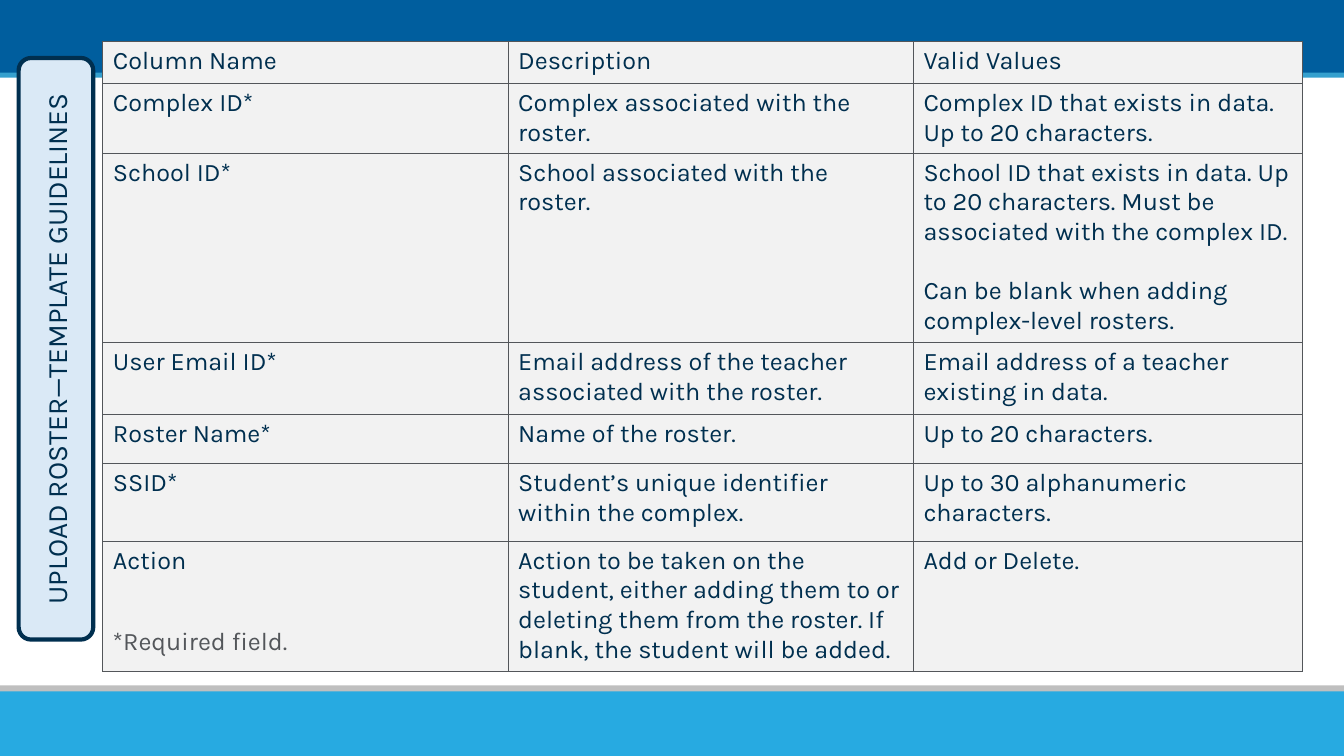
import pptx
import pptx.util
import pptx.dml.color
import pptx.enum.shapes
import pptx.enum.text
import pptx.oxml

Inches, Pt = pptx.util.Inches, pptx.util.Pt
RGB = pptx.dml.color.RGBColor.from_string
SHAPE = pptx.enum.shapes.MSO_SHAPE
ALIGN, ANCHOR = pptx.enum.text.PP_ALIGN, pptx.enum.text.MSO_ANCHOR

THEME = {
    "font": "Karla", "body": 18, "title": 20, "line_gap": 21,
    "ink": "002F4F", "grey": "53565A", "cell": "F2F2F2", "pill": "DAE9F6",
    "top": "005E9E", "top_edge": "35A0CE",
    "bottom_edge": "BFBFBF", "bottom": "27AAE1",
}
W, H = 13.33, 7.5

prs = pptx.Presentation()
prs.slide_width, prs.slide_height = Inches(W), Inches(H)
s = prs.slides.add_slide(prs.slide_layouts[6])


def add_box(kind, left, top, width, height, fill):
    sp = s.shapes.add_shape(kind, *map(Inches, (left, top, width, height)))
    sp.shadow.inherit = False
    sp.fill.solid()
    sp.fill.fore_color.rgb = RGB(THEME[fill])
    sp.line.fill.background()
    return sp


def write(p, text, size="body", color="ink"):
    r = p.add_run()
    r.text = text
    for name, value in {"name": THEME["font"], "size": Pt(THEME[size])}.items():
        setattr(r.font, name, value)
    r.font.color.rgb = RGB(THEME[color])


# Header and footer bands
for top, height, fill in [(0, 0.74, "top"), (0.72, 0.05, "top_edge"),
                          (6.8, 0.14, "bottom_edge"), (6.86, 0.64, "bottom")]:
    add_box(SHAPE.RECTANGLE, 0, top, W, height, fill)

# Table of template columns; a tuple holds the paragraphs of one cell
rows = [
    (0.42, "Column Name", "Description", "Valid Values"),
    (0.69, "Complex ID*", "Complex associated with the roster.",
     "Complex ID that exists in data. Up to 20 characters."),
    (1.88, "School ID*", "School associated with the roster.",
     ("School ID that exists in data. Up to 20 characters. "
      "Must be associated with the complex ID.",
      "Can be blank when adding complex-level rosters.")),
    (0.71, "User Email ID*",
     "Email address of the teacher associated with the roster.",
     "Email address of a teacher existing in data."),
    (0.49, "Roster Name*", "Name of the roster.", "Up to 20 characters."),
    (0.77, "SSID*", "Student’s unique identifier within the complex.",
     "Up to 30 alphanumeric characters."),
    (1.29, "Action",
     "Action to be taken on the student, either adding them to or deleting "
     "them from the roster. If blank, the student will be added.",
     "Add or Delete."),
]
col_widths = [4.02, 4.02, 3.86]
left, top = 1.02, 0.41
tbl = s.shapes.add_table(
    len(rows), len(col_widths), Inches(left), Inches(top),
    Inches(sum(col_widths)), Inches(sum(row[0] for row in rows))).table
tbl.first_row = tbl.horz_banding = False
for col, width in zip(tbl.columns, col_widths):
    col.width = Inches(width)

BORDER = ('<a:{} xmlns:a="http://schemas.openxmlformats.org/drawingml/2006/main"'
          ' w="12700"><a:solidFill><a:srgbClr val="{}"/></a:solidFill></a:{}>')
for i, (height, *texts) in enumerate(rows):
    tbl.rows[i].height = Inches(height)
    for j, text in enumerate(texts):
        cell = tbl.cell(i, j)
        tcPr = cell._tc.get_or_add_tcPr()
        for side in ("lnL", "lnR", "lnT", "lnB"):
            tcPr.append(pptx.oxml.parse_xml(BORDER.format(side, THEME["grey"], side)))
        cell.fill.solid()
        cell.fill.fore_color.rgb = RGB(THEME["cell"])
        tf = cell.text_frame
        for k, part in enumerate(text if isinstance(text, tuple) else (text,)):
            p = tf.paragraphs[0] if k == 0 else tf.add_paragraph()
            if k:
                p.space_before = Pt(THEME["line_gap"])
            write(p, part)

# Rotated title pill
pill_w, pill_h, mid_x, mid_y = 5.77, 0.74, 0.555, 3.46
sp = add_box(SHAPE.ROUNDED_RECTANGLE, mid_x - pill_w / 2, mid_y - pill_h / 2,
             pill_w, pill_h, "pill")
sp.rotation = 270
sp.line.color.rgb = RGB(THEME["ink"])
sp.line.width = Pt(3)
tf = sp.text_frame
tf.word_wrap, tf.vertical_anchor = True, ANCHOR.MIDDLE
tf.paragraphs[0].alignment = ALIGN.CENTER
write(tf.paragraphs[0], "UPLOAD ROSTER—TEMPLATE GUIDELINES", "title")

# Footnote
sp = s.shapes.add_textbox(Inches(left), Inches(6.15), Inches(3.6), Inches(0.4))
sp.text_frame.word_wrap = True
write(sp.text_frame.paragraphs[0], "*Required field.", color="grey")

prs.save("out.pptx")
